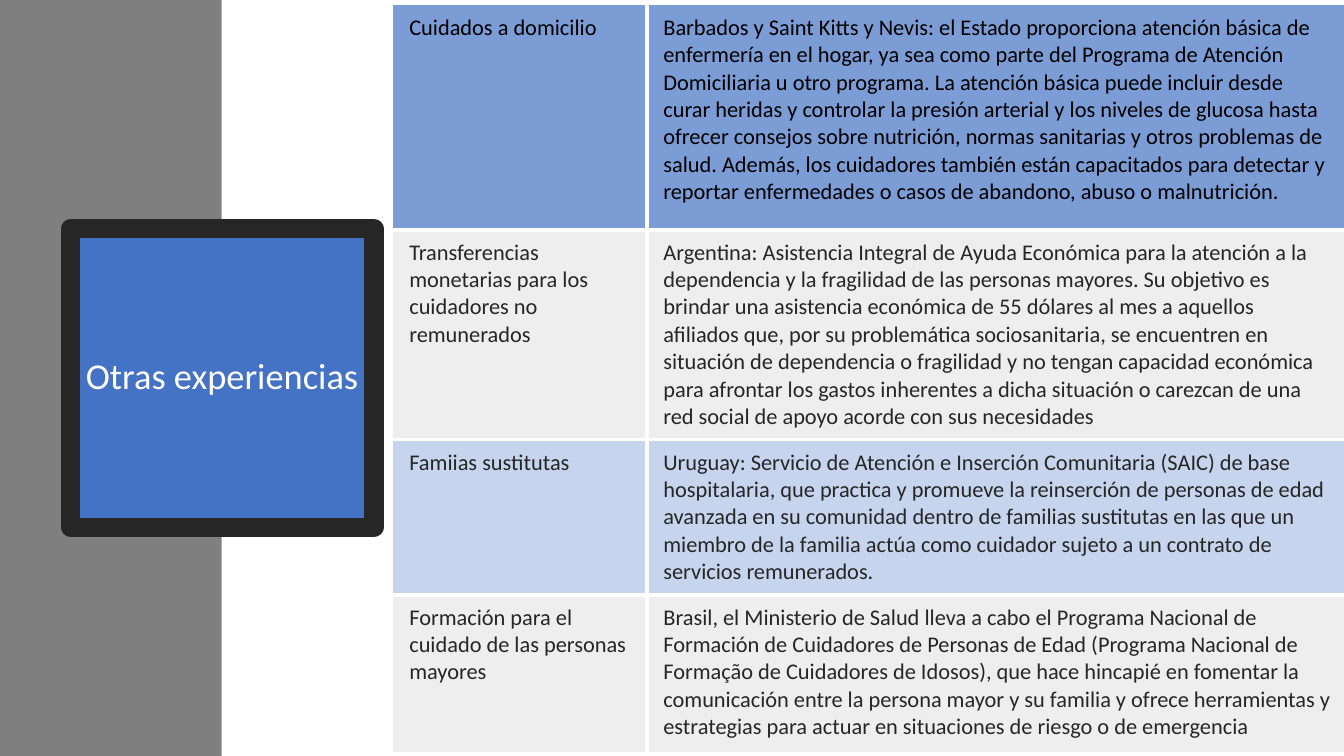
from typing import NamedTuple

from pptx import Presentation
from pptx.dml.color import RGBColor
from pptx.enum.shapes import MSO_SHAPE
from pptx.enum.text import MSO_ANCHOR, MSO_AUTO_SIZE, PP_ALIGN
from pptx.oxml.ns import qn
from pptx.util import Inches, Pt
from lxml.etree import SubElement

WHITE = RGBColor(0xFF, 0xFF, 0xFF)
BLACK = RGBColor(0x00, 0x00, 0x00)
DARK = RGBColor(0x26, 0x26, 0x26)
BLUE = RGBColor(0x44, 0x72, 0xC4)
GRAY = RGBColor(0x7F, 0x7F, 0x7F)
SAGE = RGBColor(0x87, 0x8E, 0x8B)
FONT = "Calibri"
COLUMN_WIDTHS = (2.52, 6.91)


class Experience(NamedTuple):
    topic: str
    description: str
    height: float
    fill: RGBColor
    opacity: int
    color: RGBColor = DARK


EXPERIENCES = (
    Experience(
        "Cuidados a domicilio",
        "Barbados y Saint Kitts y Nevis: el Estado proporciona atención básica de "
        "enfermería en el hogar, ya sea como parte del Programa de Atención "
        "Domiciliaria u otro programa. La atención básica puede incluir desde curar "
        "heridas y controlar la presión arterial y los niveles de glucosa hasta "
        "ofrecer consejos sobre nutrición, normas sanitarias y otros problemas de "
        "salud. Además, los cuidadores también están capacitados para detectar y "
        "reportar enfermedades o casos de abandono, abuso o malnutrición.",
        2.23, BLUE, 70, BLACK),
    Experience(
        "Transferencias monetarias para los cuidadores no remunerados",
        "Argentina: Asistencia Integral de Ayuda Económica para la atención a la "
        "dependencia y la fragilidad de las personas mayores. Su objetivo es brindar "
        "una asistencia económica de 55 dólares al mes a aquellos afiliados que, por "
        "su problemática sociosanitaria, se encuentren en situación de dependencia o "
        "fragilidad y no tengan capacidad económica para afrontar los gastos "
        "inherentes a dicha situación o carezcan de una red social de apoyo acorde "
        "con sus necesidades",
        1.98, SAGE, 15),
    Experience(
        "Famiias sustitutas",
        "Uruguay: Servicio de Atención e Inserción Comunitaria (SAIC) de base "
        "hospitalaria, que practica y promueve la reinserción de personas de edad "
        "avanzada en su comunidad dentro de familias sustitutas en las que un miembro "
        "de la familia actúa como cuidador sujeto a un contrato de servicios "
        "remunerados.",
        1.46, BLUE, 30),
    Experience(
        "Formación para el cuidado de las personas mayores",
        "Brasil, el Ministerio de Salud lleva a cabo el Programa Nacional de Formación "
        "de Cuidadores de Personas de Edad (Programa Nacional de Formação de "
        "Cuidadores de Idosos), que hace hincapié en fomentar la comunicación entre la "
        "persona mayor y su familia y ofrece herramientas y estrategias para actuar en "
        "situaciones de riesgo o de emergencia",
        1.56, SAGE, 15),
)


def add_run(paragraph, text: str, size: float, color: RGBColor) -> None:
    run = paragraph.add_run()
    run.text = text
    run.font.name = FONT
    run.font.size = Pt(size)
    run.font.color.rgb = color


def add_band(slide) -> None:
    band = slide.shapes.add_shape(MSO_SHAPE.RECTANGLE, 0, 0, Inches(2.2), Inches(7.5))
    band.shadow.inherit = False
    band.fill.solid()
    band.fill.fore_color.rgb = GRAY
    band.line.fill.background()
    slide.shapes.title._element.addprevious(band._element)


def format_title(title) -> None:
    title.left, title.top = Inches(0.7), Inches(2.27)
    title.width, title.height = Inches(3.01), Inches(2.96)
    title.fill.solid()
    title.fill.fore_color.rgb = BLUE
    title.line.color.rgb = DARK
    title.line.width = Pt(13.75)
    SubElement(title.line._ln, qn("a:round"))
    frame = title.text_frame
    frame.word_wrap = True
    frame.auto_size = MSO_AUTO_SIZE.NONE
    frame.vertical_anchor = MSO_ANCHOR.MIDDLE
    paragraph = frame.paragraphs[0]
    paragraph.alignment = PP_ALIGN.CENTER
    paragraph.line_spacing = 0.9
    add_run(paragraph, "Otras experiencias", 26, WHITE)


def set_borders(cell, inner_sides: dict[str, bool]) -> None:
    properties = cell._tc.get_or_add_tcPr()
    for side, inner in inner_sides.items():
        border = SubElement(properties, qn(f"a:ln{side}"), w=str(Pt(3)))
        if inner:
            fill = SubElement(border, qn("a:solidFill"))
            SubElement(fill, qn("a:srgbClr"), val=str(WHITE))
        else:
            SubElement(border, qn("a:noFill"))


def fill_cell(cell, color: RGBColor, opacity: int) -> None:
    cell.fill.solid()
    cell.fill.fore_color.rgb = color
    rgb = cell._tc.tcPr.find(qn("a:solidFill")).find(qn("a:srgbClr"))
    SubElement(rgb, qn("a:alpha"), val=str(opacity * 1000))


def add_experiences(slide) -> None:
    last_row, last_column = len(EXPERIENCES) - 1, len(COLUMN_WIDTHS) - 1
    table = slide.shapes.add_table(
        last_row + 1, last_column + 1, Inches(3.9), Inches(0.05),
        Inches(sum(COLUMN_WIDTHS)), Inches(sum(item.height for item in EXPERIENCES)),
    ).table
    table.first_row = False
    table.horz_banding = False
    for column, width in zip(table.columns, COLUMN_WIDTHS):
        column.width = Inches(width)
    for row, item in enumerate(EXPERIENCES):
        table.rows[row].height = Inches(item.height)
        for column, text in enumerate((item.topic, item.description)):
            cell = table.cell(row, column)
            cell.margin_left = Inches(0.16)
            cell.margin_top = cell.margin_right = cell.margin_bottom = Inches(0.09)
            set_borders(cell, {"L": column > 0, "R": column < last_column,
                               "T": row > 0, "B": row < last_row})
            fill_cell(cell, item.fill, item.opacity)
            add_run(cell.text_frame.paragraphs[0], text, 16, item.color)


def main() -> None:
    presentation = Presentation()
    presentation.slide_width = Inches(13.33)
    presentation.slide_height = Inches(7.5)
    slide = presentation.slides.add_slide(presentation.slide_layouts[5])
    add_band(slide)
    format_title(slide.shapes.title)
    add_experiences(slide)
    presentation.save("out.pptx")


if __name__ == "__main__":
    main()
